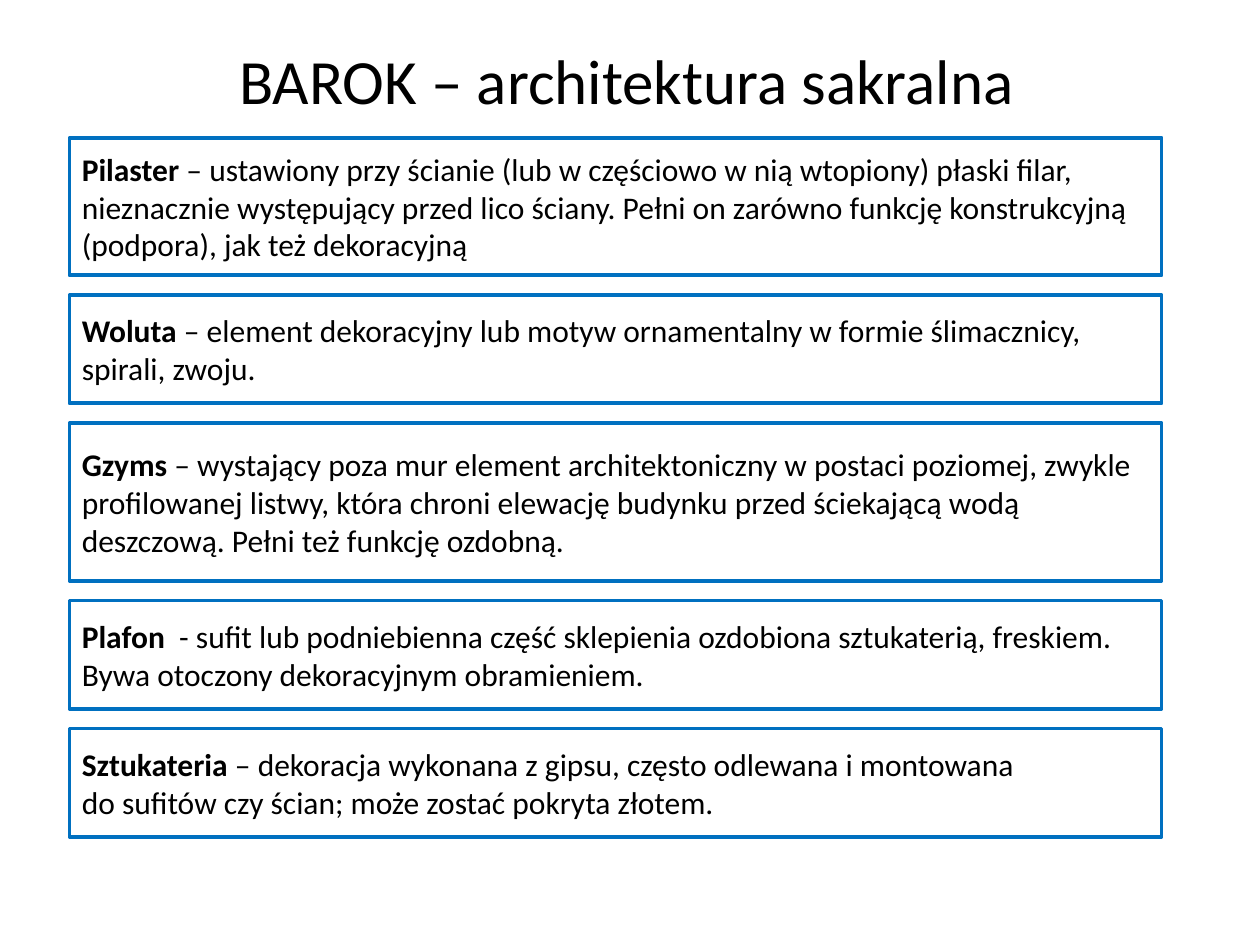
from pptx import Presentation
from pptx import util as u
from pptx.dml.color import RGBColor
from pptx.enum import shapes, text

BLACK = RGBColor(0x00, 0x00, 0x00)
WHITE = RGBColor(0xFF, 0xFF, 0xFF)
BLUE = RGBColor(0x00, 0x70, 0xC0)

TITLE_FORMAT = {"name": "Calibri", "size": u.Pt(36), "bold": False}
TERM_FORMAT = {"name": "Calibri", "size": u.Pt(18), "bold": True}
MEANING_FORMAT = {**TERM_FORMAT, "bold": False}

GAP = 0.4  # cm between definition boxes

# Height in cm, term, lines of its meaning
DEFINITIONS = [
    (2.77, "Pilaster", [
        " – ustawiony przy ścianie (lub w częściowo w nią wtopiony) płaski filar, "
        "nieznacznie występujący przed lico ściany. Pełni on zarówno funkcję "
        "konstrukcyjną (podpora), jak też dekoracyjną"]),
    (2.18, "Woluta", [
        " – element dekoracyjny lub motyw ornamentalny w formie ślimacznicy, "
        "spirali, zwoju."]),
    (3.18, "Gzyms", [
        " – wystający poza mur element architektoniczny w postaci poziomej, zwykle "
        "profilowanej listwy, która chroni elewację budynku przed ściekającą wodą "
        "deszczową. Pełni też funkcję ozdobną."]),
    (2.18, "Plafon", [
        "  - sufit lub podniebienna część sklepienia ozdobiona sztukaterią, "
        "freskiem. Bywa otoczony dekoracyjnym obramieniem."]),
    (2.18, "Sztukateria", [
        " – dekoracja wykonana z gipsu, często odlewana i montowana",
        "do sufitów czy ścian; może zostać pokryta złotem."]),
]


def add_run(paragraph, wording, font_format):
    run = paragraph.add_run()
    run.text = wording
    for attribute, value in font_format.items():
        setattr(run.font, attribute, value)
    run.font.color.rgb = BLACK


def add_title(slide, left, top, width, height):
    title = slide.shapes.add_textbox(*map(u.Cm, (left, top, width, height)))
    frame = title.text_frame
    frame.word_wrap = True
    frame.vertical_anchor = text.MSO_ANCHOR.MIDDLE
    heading = frame.paragraphs[0]
    heading.alignment = text.PP_ALIGN.CENTER
    add_run(heading, "BAROK – architektura sakralna", TITLE_FORMAT)


def add_definition(slide, left, top, width, height, term, meaning):
    box = slide.shapes.add_shape(
        shapes.MSO_SHAPE.RECTANGLE, *map(u.Cm, (left, top, width, height)))
    box.shadow.inherit = False
    box.fill.solid()
    box.fill.fore_color.rgb = WHITE
    box.line.color.rgb = BLUE
    box.line.width = u.Pt(2)
    frame = box.text_frame
    frame.word_wrap = True
    frame.vertical_anchor = text.MSO_ANCHOR.MIDDLE
    # The bold term opens the first line
    add_run(frame.paragraphs[0], term, TERM_FORMAT)
    for number, line in enumerate(meaning):
        paragraph = frame.add_paragraph() if number else frame.paragraphs[0]
        paragraph.alignment = text.PP_ALIGN.LEFT
        add_run(paragraph, line, MEANING_FORMAT)


def add_glossary(slide, left, top, width):
    for height, term, meaning in DEFINITIONS:
        add_definition(slide, left, top, width, height, term, meaning)
        top += height + GAP


def main():
    deck = Presentation()
    deck.slide_width, deck.slide_height = u.Cm(25.4), u.Cm(19.05)
    slide = deck.slides.add_slide(deck.slide_layouts[6])
    add_title(slide, 1.2, 0.4, 22.86, 2.4)
    add_glossary(slide, 1.4, 2.78, 22.02)
    deck.save("out.pptx")


if __name__ == "__main__":
    main()
